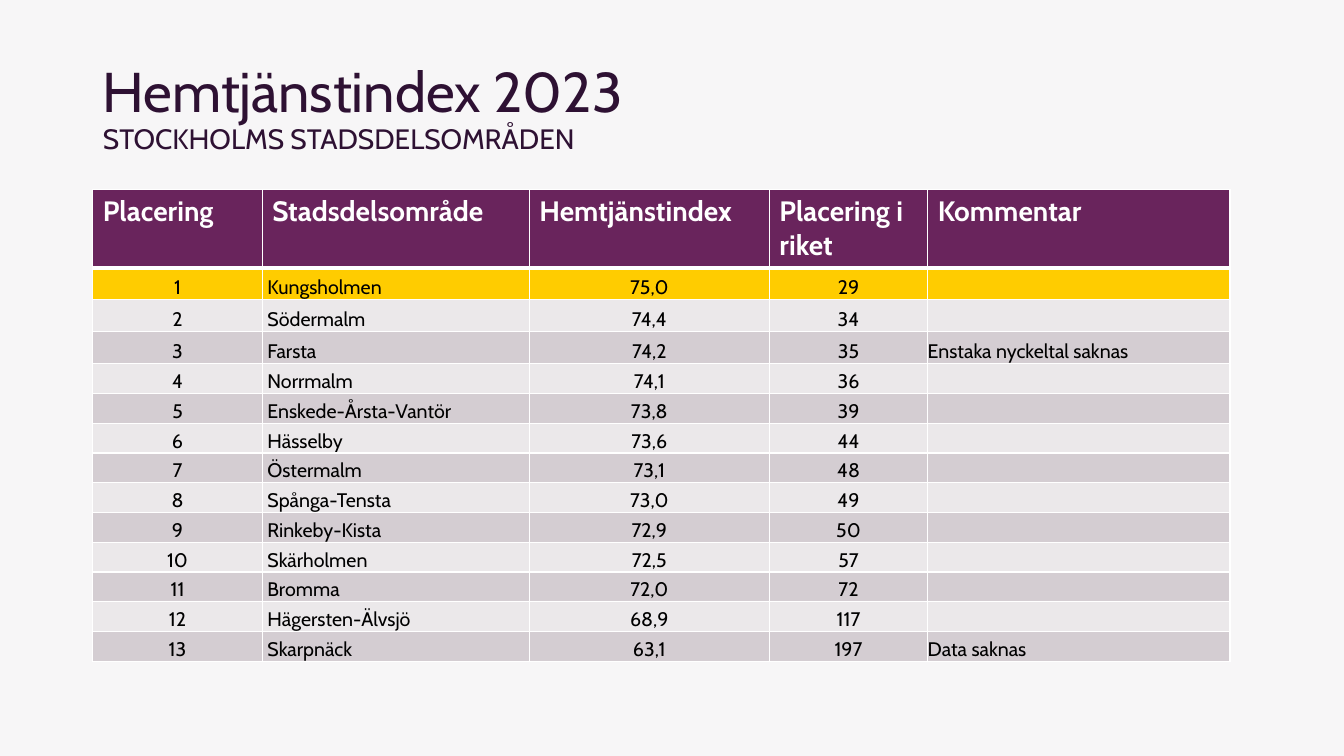
import dataclasses

import lxml.etree
import pptx
import pptx.dml.color
import pptx.enum.text
import pptx.oxml.ns
import pptx.util

Cm = pptx.util.Cm
Pt = pptx.util.Pt
qn = pptx.oxml.ns.qn
Align = pptx.enum.text.PP_ALIGN
Anchor = pptx.enum.text.MSO_ANCHOR

FONT = "Cabin"
COLORS = {
    "back": "F7F6F7",
    "title": "2E1133",
    "head": "69245C",
    "top": "FFCC00",
    "light": "EBE8EA",
    "dark": "D4CDD2",
    "white": "FFFFFF",
    "black": "000000",
}


@dataclasses.dataclass(frozen=True)
class Column:
    head: str
    width: float
    align: Align
    inset: float


@dataclasses.dataclass(frozen=True)
class Area:
    name: str
    index: str
    rank: str
    note: str = ""


COLUMNS = [
    Column("Placering", 4.27, Align.CENTER, 0.02),
    Column("Stadsdelsområde", 6.73, Align.LEFT, 0.13),
    Column("Hemtjänstindex", 6.05, Align.CENTER, 0),
    Column("Placering i riket", 3.99, Align.CENTER, 0.02),
    Column("Kommentar", 7.62, Align.LEFT, 0),
]
AREAS = [
    Area("Kungsholmen", "75,0", "29"),
    Area("Södermalm", "74,4", "34"),
    Area("Farsta", "74,2", "35", "Enstaka nyckeltal saknas"),
    Area("Norrmalm", "74,1", "36"),
    Area("Enskede-Årsta-Vantör", "73,8", "39"),
    Area("Hässelby", "73,6", "44"),
    Area("Östermalm", "73,1", "48"),
    Area("Spånga-Tensta", "73,0", "49"),
    Area("Rinkeby-Kista", "72,9", "50"),
    Area("Skärholmen", "72,5", "57"),
    Area("Bromma", "72,0", "72"),
    Area("Hägersten-Älvsjö", "68,9", "117"),
    Area("Skarpnäck", "63,1", "197", "Data saknas"),
]
HEIGHTS = [1.93, 0.79, 0.81, 0.81] + [0.75] * 10


def color(key: str) -> pptx.dml.color.RGBColor:
    return pptx.dml.color.RGBColor.from_string(COLORS[key])


def style(run, size: float, key: str, bold: bool = False) -> None:
    run.font.name = FONT
    run.font.size = Pt(size)
    run.font.bold = bold
    run.font.color.rgb = color(key)


def border(cell, sides: dict[str, float]) -> None:
    props = cell._tc.get_or_add_tcPr()
    for place, (side, width) in enumerate(sides.items()):
        line = lxml.etree.Element(qn(f"a:ln{side}"), w=str(Pt(width)))
        fill = lxml.etree.SubElement(line, qn("a:solidFill"))
        lxml.etree.SubElement(fill, qn("a:srgbClr"), val=COLORS["white"])
        props.insert(place, line)


def write(cell, text: str, fill: str, size: float, ink: str, bold: bool) -> None:
    cell.fill.solid()
    cell.fill.fore_color.rgb = color(fill)
    cell.text_frame.text = text
    para = cell.text_frame.paragraphs[0]
    for run in para.runs:
        style(run, size, ink, bold)
    if not text:
        lxml.etree.SubElement(para._p, qn("a:endParaRPr"), sz=str(size * 100))


def draw_title(slide) -> None:
    title = slide.shapes.title
    title.left, title.top = Cm(2.34), Cm(1.5)
    title.width, title.height = Cm(29.21), Cm(3.07)
    frame = title.text_frame
    frame.text = "Hemtjänstindex 2023\vSTOCKHOLMS STADSDELSOMRÅDEN"
    frame.word_wrap = True
    frame.auto_size = pptx.enum.text.MSO_AUTO_SIZE.NONE
    frame.vertical_anchor = Anchor.TOP
    para = frame.paragraphs[0]
    para.alignment = Align.LEFT
    para.line_spacing = 0.9
    for run, size in zip(para.runs, (40, 20)):
        style(run, size, "title")


def draw_table(slide) -> None:
    width = sum(col.width for col in COLUMNS)
    table = slide.shapes.add_table(
        len(HEIGHTS), len(COLUMNS), Cm(2.34), Cm(4.78), Cm(width), Cm(sum(HEIGHTS))
    ).table
    for row, height in zip(table.rows, HEIGHTS):
        row.height = Cm(height)
    for x, col in enumerate(COLUMNS):
        table.columns[x].width = Cm(col.width)
        cell = table.cell(0, x)
        write(cell, col.head, "head", 20, "white", True)
        border(cell, {"L": 1, "R": 1, "T": 1, "B": 3})
    for y, area in enumerate(AREAS, 1):
        fill = "top" if y == 1 else "dark" if y % 2 else "light"
        texts = (str(y), area.name, area.index, area.rank, area.note)
        for x, (col, text) in enumerate(zip(COLUMNS, texts)):
            cell = table.cell(y, x)
            write(cell, text, fill, 14, "black", False)
            border(cell, {"L": 1, "R": 1, "T": 3 if y == 1 else 1, "B": 1})
            cell.vertical_anchor = Anchor.BOTTOM
            cell.margin_left = cell.margin_right = Cm(col.inset)
            cell.margin_top = cell.margin_bottom = 0
            cell.text_frame.paragraphs[0].alignment = col.align


def main() -> None:
    deck = pptx.Presentation()
    deck.slide_width, deck.slide_height = Cm(33.87), Cm(19.05)
    slide = deck.slides.add_slide(deck.slide_layouts[5])
    slide.background.fill.solid()
    slide.background.fill.fore_color.rgb = color("back")
    draw_title(slide)
    draw_table(slide)
    deck.save("out.pptx")


if __name__ == "__main__":
    main()
